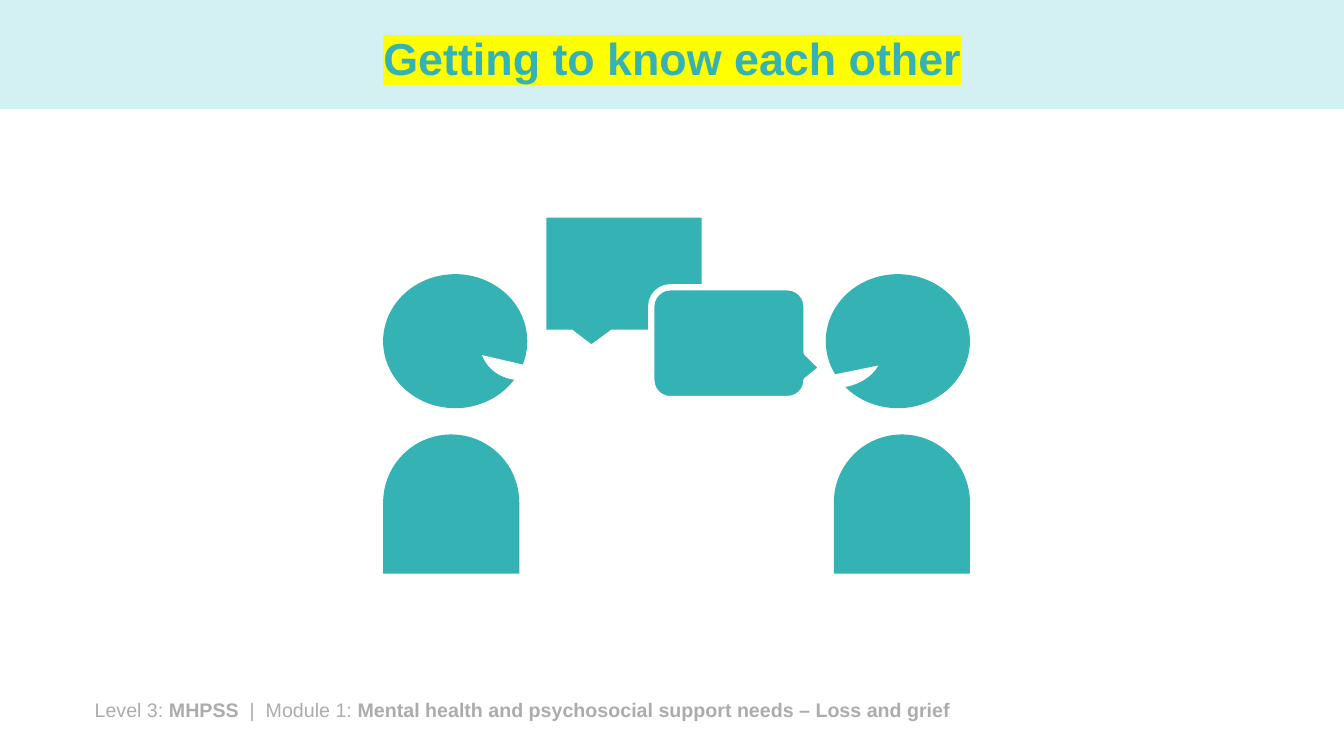
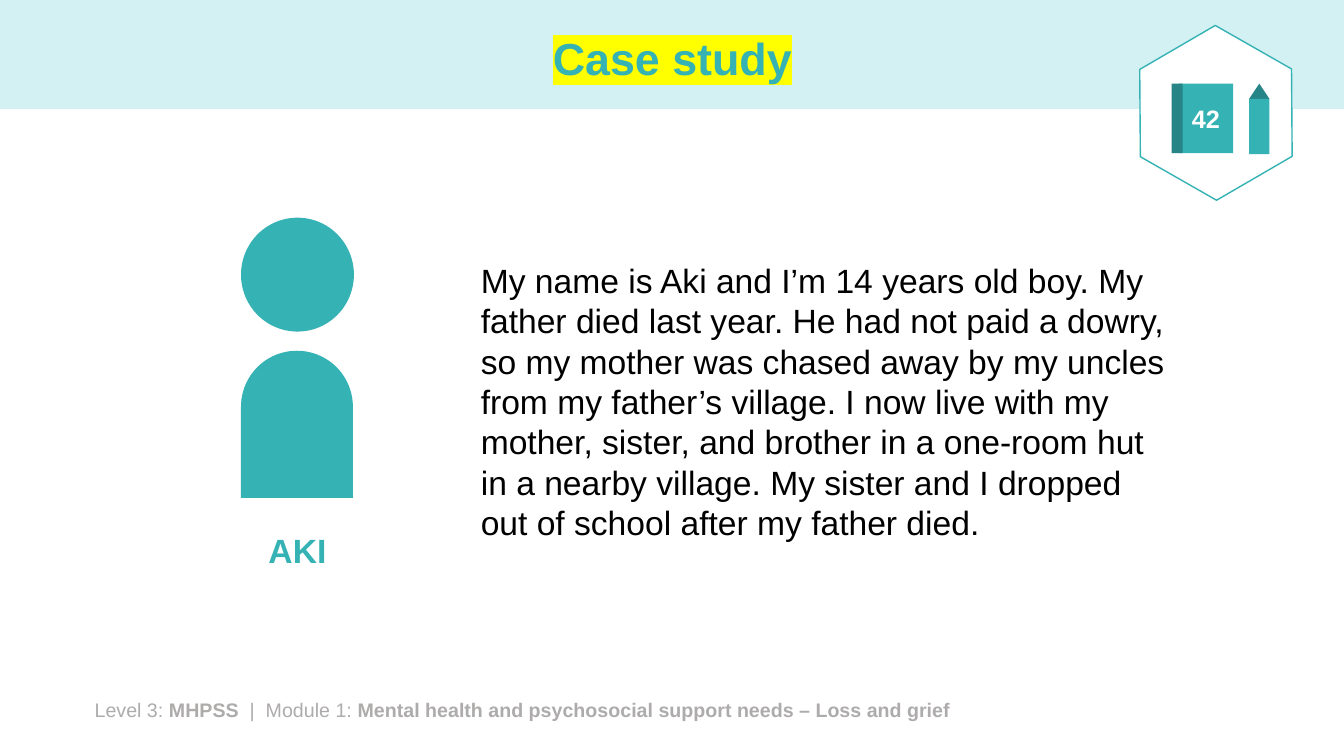
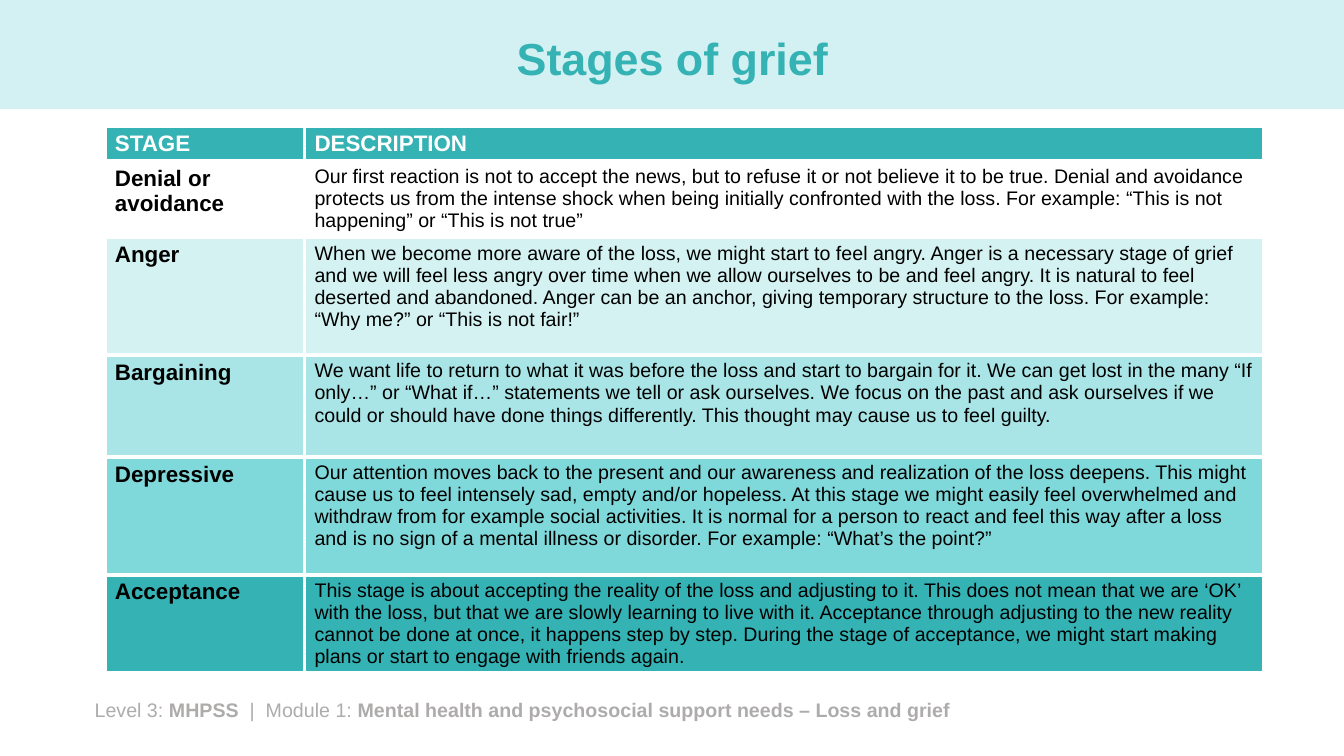
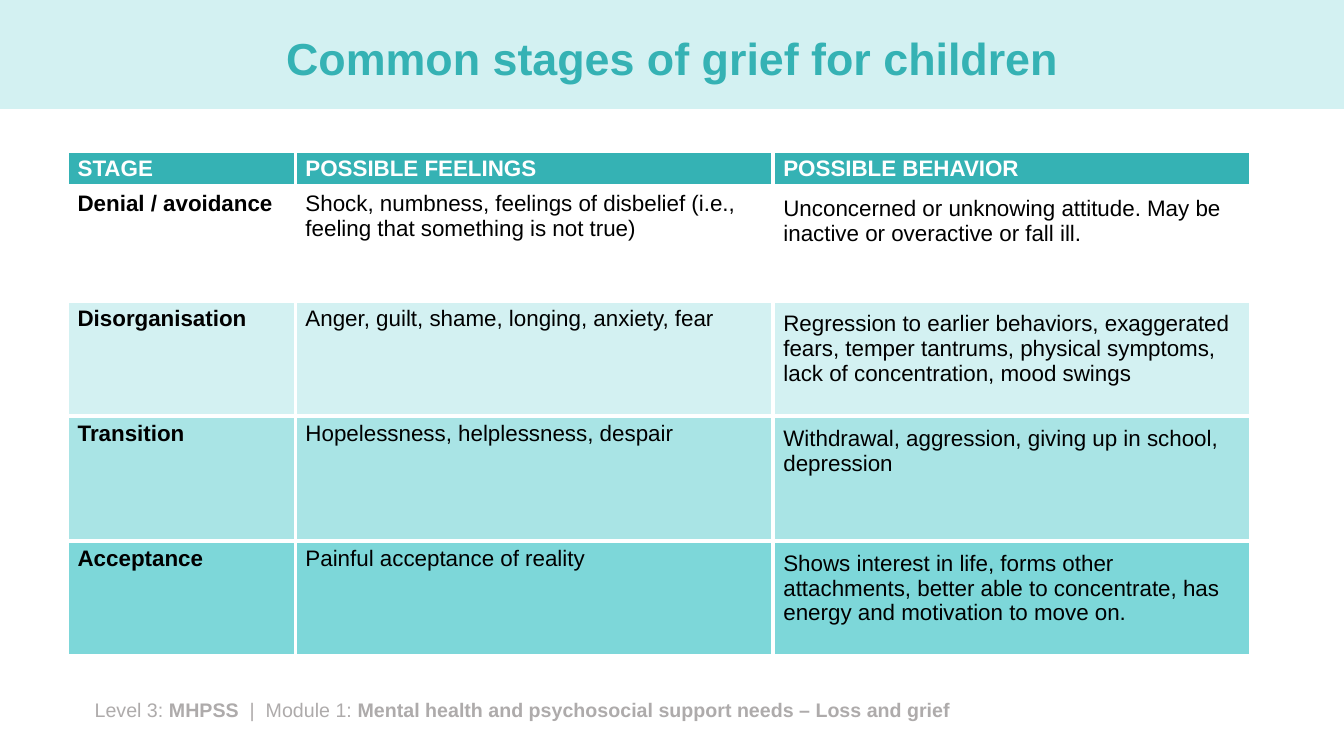
from dataclasses import dataclass
from lxml.etree import SubElement
from pptx import Presentation
from pptx.dml.color import RGBColor
from pptx.enum.shapes import MSO_SHAPE as Kind
from pptx.enum.text import MSO_ANCHOR, PP_ALIGN
from pptx.oxml import parse_xml
from pptx.oxml.ns import nsdecls, qn
from pptx.util import Inches, Pt

TEAL, DARK, PALE = "35B2B4", "278587", "D3F1F2"
WHITE, BLACK, GREY, YELLOW = "FFFFFF", "000000", "AEABAB", "FFFF00"
FONT = "Arial"


@dataclass
class Form:
    kind: Kind
    box: tuple[float, float, float, float]
    fill: str = TEAL
    line: str = ""
    width: float = 1
    adj: tuple[float, ...] = ()
    turn: float = 0


@dataclass
class Grid:
    left: float
    top: float
    cols: list[float]
    rows: list[float]
    fills: list[str]
    cells: list[list[str]]
    size: float
    pad: float


def tint(code: str) -> RGBColor:
    return RGBColor.from_string(code)


def place(box: tuple[float, float, float, float]) -> list[int]:
    return [Inches(v) for v in box]


def write(frame, text: str, *, size: float, color: str = BLACK,
          bold: bool = False, align=PP_ALIGN.LEFT, mark: str = "",
          space: float = 1.0) -> None:
    """Add one run to the first paragraph of a text frame."""
    frame.word_wrap = True
    para = frame.paragraphs[0]
    para.alignment, para.line_spacing = align, space
    run = para.add_run()
    run.text = text
    font = run.font
    font.name, font.size, font.bold = FONT, Pt(size), bold
    font.color.rgb = tint(color)
    if mark:
        fill = run.font._element.find(qn("a:solidFill"))
        fill.addnext(parse_xml(
            f'<a:highlight {nsdecls("a")}><a:srgbClr val="{mark}"/></a:highlight>'))


def draw(slide, form: Form):
    shape = slide.shapes.add_shape(form.kind, *place(form.box))
    shape.shadow.inherit = False
    shape.fill.solid()
    shape.fill.fore_color.rgb = tint(form.fill)
    if form.line:
        shape.line.color.rgb = tint(form.line)
        shape.line.width = Pt(form.width)
    else:
        shape.line.fill.background()
    for i, value in enumerate(form.adj):
        shape.adjustments[i] = value
    shape.rotation = form.turn
    return shape


def label(slide, box: tuple[float, float, float, float], text: str, **style):
    area = slide.shapes.add_textbox(*place(box))
    write(area.text_frame, text, **style)
    return area


def edge(cell) -> None:
    """Give a cell white borders on all four sides."""
    props = cell._tc.get_or_add_tcPr()
    for i, side in enumerate("LRTB"):
        line = parse_xml(f'<a:ln{side} {nsdecls("a")} w="{Pt(3)}"/>')
        fill = SubElement(line, qn("a:solidFill"))
        SubElement(fill, qn("a:srgbClr"), val=WHITE)
        props.insert(i, line)


def tabulate(slide, grid: Grid) -> None:
    box = (grid.left, grid.top, sum(grid.cols), sum(grid.rows))
    table = slide.shapes.add_table(
        len(grid.rows), len(grid.cols), *place(box)).table
    table.horz_banding = False
    for col, width in zip(table.columns, grid.cols):
        col.width = Inches(width)
    for r, (row, height) in enumerate(zip(table.rows, grid.rows)):
        row.height = Inches(height)
        for c, cell in enumerate(row.cells):
            cell.fill.solid()
            cell.fill.fore_color.rgb = tint(grid.fills[r])
            edge(cell)
            if r and c == 2:
                cell.margin_top = cell.margin_bottom = Inches(grid.pad)
            head = r == 0 or c == 0
            write(cell.text_frame, grid.cells[r][c],
                  size=16 if head else grid.size, bold=head,
                  color=BLACK if r else WHITE)


def brand(slide, layout) -> None:
    """Move the band and the footer onto the shared layout."""
    band = draw(slide, Form(Kind.RECTANGLE, (0, 0, 13.33, 1.08), PALE))
    foot = label(slide, (0.84, 6.87, 11.35, 0.34), "Level 3: ",
                 size=14, color=GREY)
    for text, bold in (
            ("MHPSS", True), ("  |  Module 1: ", False),
            ("Mental health and psychosocial support needs – Loss and grief", True)):
        write(foot.text_frame, text, size=14, color=GREY, bold=bold)
    for part in (band, foot):
        layout.shapes.element.append(part.element)


def start(deck, layout, title: str, mark: str = ""):
    slide = deck.slides.add_slide(layout)
    frame = slide.shapes.title.text_frame
    frame.vertical_anchor = MSO_ANCHOR.MIDDLE
    write(frame, title, size=32, color=TEAL, bold=True,
          align=PP_ALIGN.CENTER, mark=mark, space=0.9)
    return slide


def meet(slide) -> None:
    """Two people talking, mirrored about one axis."""
    axis = 6.71
    for form in (Form(Kind.OVAL, (3.8, 2.72, 1.43, 1.33)),
                 Form(Kind.ROUND_2_SAME_RECTANGLE, (3.8, 4.31, 1.35, 1.38),
                      adj=(0.5, 0))):
        x, y, w, h = form.box
        draw(slide, form)
        form.box = (2 * axis - x - w, y, w, h)
        draw(slide, form)
    # Mouths: the right one has its chord angles mirrored
    low, high, half = 27, 97.34, 108
    for box, adj in (((4.76, 3.04, 0.78, 0.73), (low, high)),
                     ((7.79, 3.12, 0.96, 0.73), (half - high, half - low))):
        draw(slide, Form(Kind.CHORD, box, WHITE, adj=adj))
    # Speech bubbles
    bubble = Kind.ROUNDED_RECTANGULAR_CALLOUT
    draw(slide, Form(bubble, (5.42, 2.16, 1.54, 1.11), adj=(-0.21, 0.63, 0)))
    draw(slide, Form(bubble, (6.46, 2.85, 1.54, 1.11), line=WHITE, width=4.5,
                     adj=(0.6, 0.22, 0.17)))


def study(slide) -> None:
    # Aki
    draw(slide, Form(Kind.ROUND_2_SAME_RECTANGLE, (2.39, 3.48, 1.11, 1.46),
                     adj=(0.5, 0)))
    draw(slide, Form(Kind.OVAL, (2.39, 2.16, 1.12, 1.13)))
    label(slide, (4.67, 2.53, 7.01, 2.93), STORY, size=24)
    label(slide, (2.06, 5.21, 1.78, 0.5), "AKI", size=24, color=TEAL,
          bold=True, align=PP_ALIGN.CENTER)
    # Workbook badge
    draw(slide, Form(Kind.HEXAGON, (11.19, 0.37, 1.74, 1.5), WHITE, TEAL,
                     adj=(0.29,), turn=29.7))
    book = draw(slide, Form(Kind.RECTANGLE, (11.69, 0.83, 0.54, 0.69)))
    book.text_frame.vertical_anchor = MSO_ANCHOR.MIDDLE
    write(book.text_frame, "42", size=18, color=WHITE, bold=True,
          align=PP_ALIGN.CENTER)
    draw(slide, Form(Kind.RECTANGLE, (11.62, 0.83, 0.11, 0.69), DARK))
    draw(slide, Form(Kind.ISOSCELES_TRIANGLE, (12.39, 0.83, 0.2, 0.15), DARK))
    draw(slide, Form(Kind.RECTANGLE, (12.39, 0.98, 0.2, 0.55)))


STORY = (
    "My name is Aki and I’m 14 years old boy. My father died last year. "
    "He had not paid a dowry, so my mother was chased away by my uncles from "
    "my father’s village. I now live with my mother, sister, and brother in a "
    "one-room hut in a nearby village. My sister and I dropped out of school "
    "after my father died.")

STAGES = Grid(
    1.04, 1.25, [1.98, 9.52], [0.27, 0.73, 1.17, 1.01, 1.17, 0.95],
    [TEAL, WHITE, "D4F2F2", "A9E5E6", "7FD8D9", TEAL],
    [["STAGE", "DESCRIPTION"],
     ["Denial or avoidance",
      "Our first reaction is not to accept the news, but to refuse it or not "
      "believe it to be true. Denial and avoidance protects us from the "
      "intense shock when being initially confronted with the loss. For "
      "example: “This is not happening” or “This is not true”"],
     ["Anger",
      "When we become more aware of the loss, we might start to feel angry. "
      "Anger is a necessary stage of grief and we will feel less angry over "
      "time when we allow ourselves to be and feel angry. It is natural to "
      "feel deserted and abandoned. Anger can be an anchor, giving temporary "
      "structure to the loss. For example: “Why me?” or “This is not fair!”"],
     ["Bargaining",
      "We want life to return to what it was before the loss and start to "
      "bargain for it. We can get lost in the many “If only…” or “What if…” "
      "statements we tell or ask ourselves. We focus on the past and ask "
      "ourselves if we could or should have done things differently. This "
      "thought may cause us to feel guilty."],
     ["Depressive",
      "Our attention moves back to the present and our awareness and "
      "realization of the loss deepens. This might cause us to feel intensely "
      "sad, empty and/or hopeless. At this stage we might easily feel "
      "overwhelmed and withdraw from for example social activities. It is "
      "normal for a person to react and feel this way after a loss and is no "
      "sign of a mental illness or disorder. For example: “What’s the point?”"],
     ["Acceptance",
      "This stage is about accepting the reality of the loss and adjusting to "
      "it. This does not mean that we are ‘OK’ with the loss, but that we are "
      "slowly learning to live with it. Acceptance through adjusting to the "
      "new reality cannot be done at once, it happens step by step. During "
      "the stage of acceptance, we might start making plans or start to "
      "engage with friends again."]],
    size=14, pad=0.05)

YOUTH = Grid(
    0.67, 1.5, [2.26, 4.74, 4.74], [0.33, 1.14, 1.14, 1.24, 1.14],
    [TEAL, WHITE, PALE, "A9E4E5", "7DD7D9"],
    [["STAGE", "POSSIBLE FEELINGS", "POSSIBLE BEHAVIOR"],
     ["Denial / avoidance",
      "Shock, numbness, feelings of disbelief (i.e., feeling that something "
      "is not true)",
      "Unconcerned or unknowing attitude. May be inactive or overactive or "
      "fall ill."],
     ["Disorganisation", "Anger, guilt, shame, longing, anxiety, fear",
      "Regression to earlier behaviors, exaggerated fears, temper tantrums, "
      "physical symptoms, lack of concentration, mood swings"],
     ["Transition", "Hopelessness, helplessness, despair",
      "Withdrawal, aggression, giving up in school, depression"],
     ["Acceptance", "Painful acceptance of reality",
      "Shows interest in life, forms other attachments, better able to "
      "concentrate, has energy and motivation to move on."]],
    size=16, pad=0.1)


def main() -> None:
    deck = Presentation()
    deck.slide_width, deck.slide_height = Inches(13.33), Inches(7.5)

    # Shared layout: title place only, then band and footer
    layout = deck.slide_layouts[5]
    title, *rest = layout.placeholders
    for spare in rest:
        layout.shapes.element.remove(spare.element)
    title.left, title.top, title.width, title.height = place(
        (0.92, 0.13, 11.5, 0.95))

    first = start(deck, layout, "Getting to know each other", YELLOW)
    brand(first, layout)
    meet(first)
    study(start(deck, layout, "Case study", YELLOW))
    tabulate(start(deck, layout, "Stages of grief"), STAGES)
    tabulate(start(deck, layout, "Common stages of grief for children"), YOUTH)
    deck.save("out.pptx")


if __name__ == "__main__":
    main()
